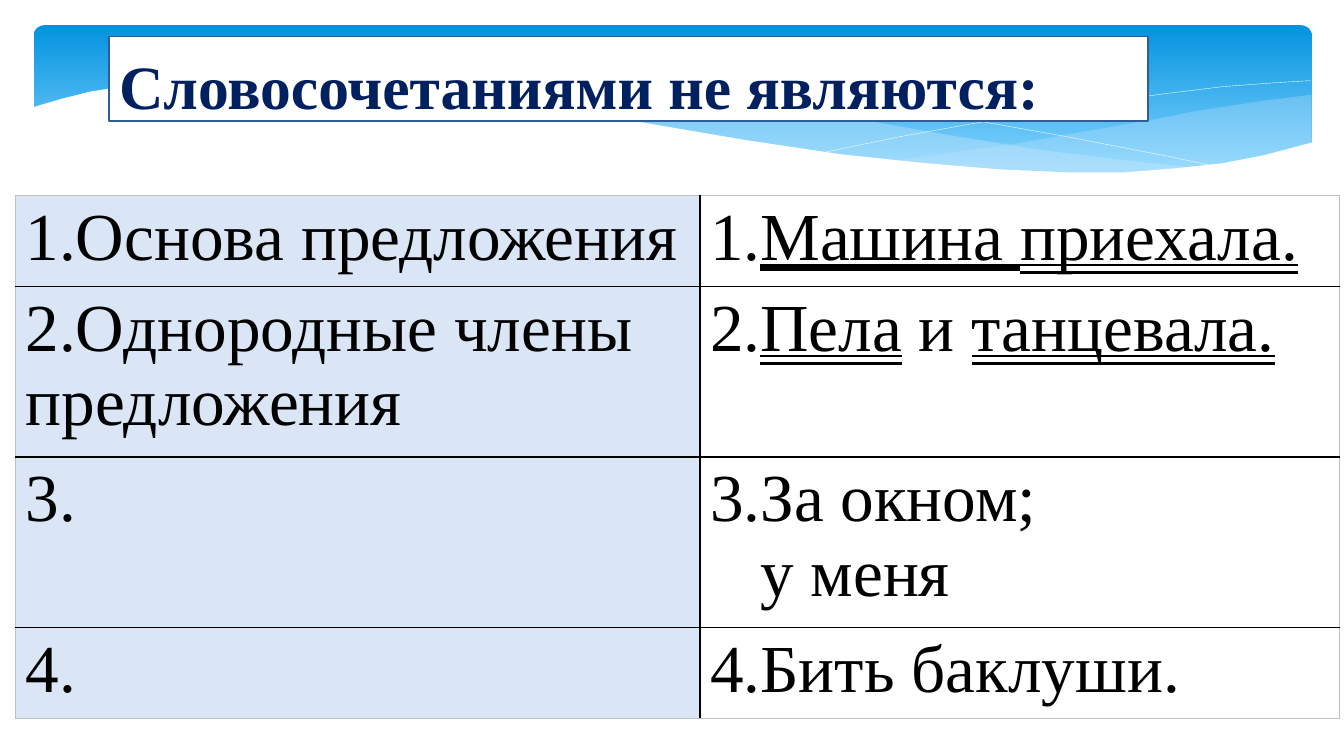
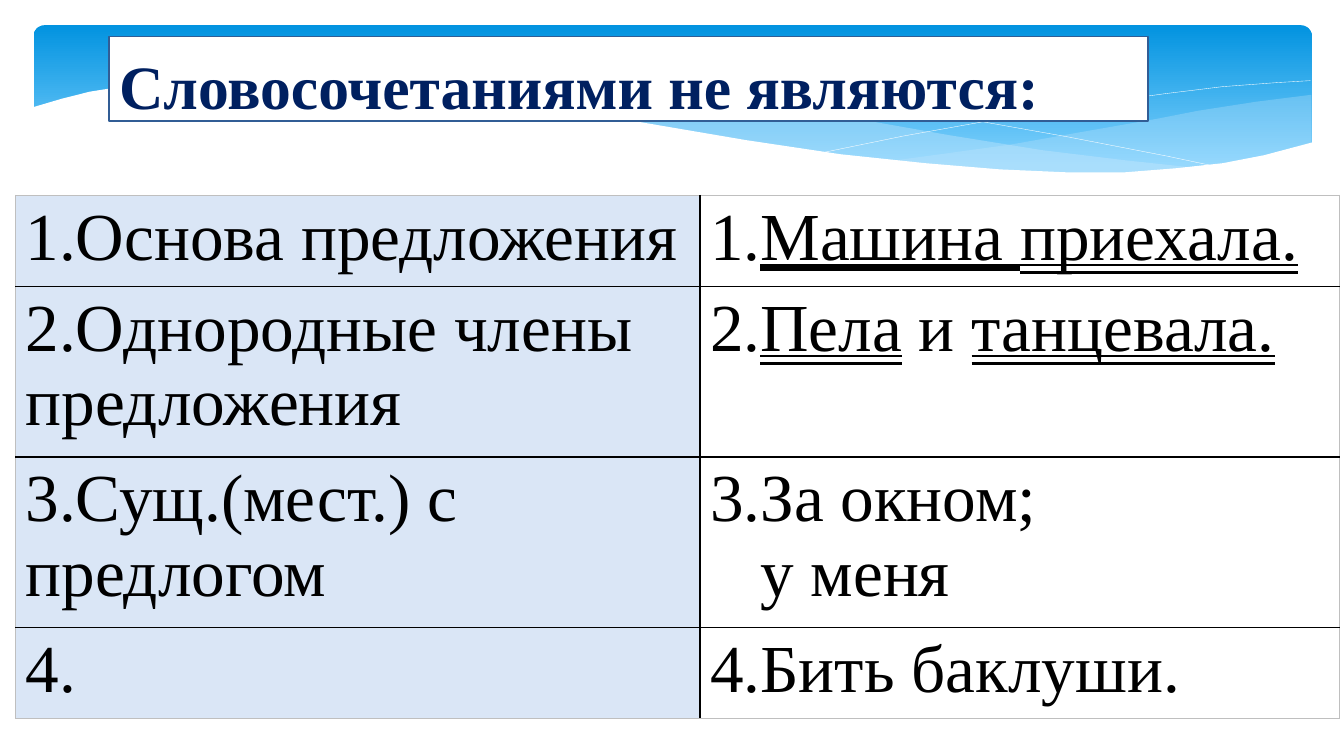
"""Build two slides that list what does not count as a word combination."""
from dataclasses import dataclass
from typing import Optional

from lxml import etree
from pptx import Presentation
from pptx.dml.color import RGBColor
from pptx.enum.shapes import MSO_SHAPE
from pptx.enum.text import MSO_ANCHOR, MSO_AUTO_SIZE, MSO_UNDERLINE, PP_ALIGN
from pptx.oxml.ns import qn
from pptx.util import Pt

ROUNDED = MSO_SHAPE.ROUNDED_RECTANGLE
TOP = MSO_ANCHOR.TOP
LEFT = PP_ALIGN.LEFT
FIXED_SIZE = MSO_AUTO_SIZE.NONE
SUBJECT = MSO_UNDERLINE.HEAVY_LINE
PREDICATE = MSO_UNDERLINE.DOUBLE_LINE
TITLE_ONLY_LAYOUT = 5


@dataclass(frozen=True)
class Theme:
    """Colours, font and type sizes of the deck."""

    font: str = "Times New Roman"
    title_size: float = 44
    table_size: float = 48
    white: str = "FFFFFF"
    black: str = "000000"
    navy: str = "002060"
    title_border: str = "315D95"
    band_top: str = "0293E0"
    band_bottom: str = "83D3FE"
    pale_wave: str = "C6E7FC"
    rule_column: str = "DAE6F6"
    table_edge: str = "BFBFBF"


@dataclass(frozen=True)
class Wave:
    """One outline of the header band, with its points."""

    points: tuple[tuple[float, float], ...]
    fill: Optional[str] = None
    line: Optional[str] = None
    opacity: int = 100


@dataclass(frozen=True)
class Phrase:
    """A stretch of text with one kind of underline."""

    text: str
    underline: Optional[MSO_UNDERLINE] = None


@dataclass(frozen=True)
class Line:
    """A paragraph of phrases with a left indent."""

    phrases: tuple[Phrase, ...]
    indent: float = 0


@dataclass(frozen=True)
class Row:
    """A rule, the lines of its example and the row height."""

    rule: str
    example: tuple[Line, ...]
    height: float


THEME = Theme()
TITLE = "Словосочетаниями не являются:"
COLUMN_WIDTHS = (489, 457)
SHORT_ROW, TALL_ROW = 65, 122

WAVES = (
    Wave((
        (936.7, 67.7), (897.1, 72.7), (855.4, 79.2), (825.8, 85), (772.6, 94.3),
        (723.6, 103), (677.5, 109.4), (635, 115.2), (676.8, 118.8), (715, 121.7),
        (749.5, 123.8), (801.4, 123.8), (837.4, 121.7), (869, 117.4),
        (897.8, 112.3), (936.7, 102.2),
    ), fill=THEME.pale_wave, opacity=29),
    Wave((
        (856.8, 120.2), (803.5, 114.5), (744.5, 107.3), (677.5, 96.5),
        (604.1, 83.5), (546.5, 73.4), (493.9, 66.2), (445.7, 61.9), (403.2, 59),
        (364.3, 57.6), (330.5, 57.6), (301, 59), (275, 61.9), (328.3, 67.7),
        (388.1, 76.3), (431.3, 83.5), (508.3, 97.2), (577.4, 108),
        (638.6, 115.9), (693.4, 121), (741.6, 123.8), (784.8, 124.6),
        (823, 123.1),
    ), fill=THEME.pale_wave, opacity=40),
    Wave((
        (296.6, 64.8), (315.4, 61.9), (348.5, 59.8), (385.2, 59), (432, 59),
        (489.6, 61.9), (534.2, 65.5), (583.9, 70.6), (637.9, 77.8),
        (698.4, 86.4), (763.2, 97.9), (833.8, 111.6), (871.2, 119.5),
    ), line=THEME.white),
    Wave((
        (589, 108.7), (645.1, 97.2), (717.8, 84.2), (774, 74.9), (831.6, 67),
        (873.4, 61.9), (912.2, 59), (936, 57.6),
    ), line=THEME.white),
    Wave((
        (938.2, 101.5), (902.9, 110.9), (873.4, 116.6), (840.2, 120.2),
        (803.5, 123.1), (761.8, 123.1), (714.2, 121), (661, 116.6),
        (600.5, 110.2), (532.8, 100.1), (456.5, 87.1), (429.1, 82.1),
        (375.1, 73.4), (326.2, 66.2), (280.8, 61.2), (239.8, 58.3),
        (203, 56.2), (169.2, 56.2), (126.7, 58.3), (91.4, 61.2), (64.1, 65.5),
        (43.9, 70.6), (22.3, 77), (22.3, 161.3), (938.2, 161.3),
    ), fill=THEME.white),
)


def plain(text: str, indent: float = 0) -> Line:
    """Return a line without underlines."""
    return Line((Phrase(text),), indent)


def rows_with(third_rule: str) -> tuple[Row, ...]:
    """Return the table rows, with the given wording of the third rule."""
    return (
        Row("1.Основа предложения", (Line((
            Phrase("1."), Phrase("Машина ", SUBJECT), Phrase("приехала.", PREDICATE),
        )),), SHORT_ROW),
        Row("2.Однородные члены предложения", (Line((
            Phrase("2."), Phrase("Пела", PREDICATE), Phrase(" и "),
            Phrase("танцевала.", PREDICATE),
        )),), TALL_ROW),
        Row(third_rule, (plain("3.За окном;"), plain("у меня", 36)), TALL_ROW),
        Row("4.", (plain("4.Бить баклуши."),), SHORT_ROW),
    )


def rgb(code: str) -> RGBColor:
    """Turn a hex code into a colour."""
    return RGBColor.from_string(code)


def style_run(run, size: float, color: str, bold: bool = False) -> None:
    """Give a run the deck font with a size and colour."""
    run.font.name = THEME.font
    run.font.size = Pt(size)
    run.font.bold = bold
    run.font.color.rgb = rgb(color)


def draw_wave(slide, wave: Wave):
    """Draw one wave and return its shape."""
    corners = [(Pt(x), Pt(y)) for x, y in wave.points]
    builder = slide.shapes.build_freeform(*corners[0], scale=1.0)
    builder.add_line_segments(corners[1:], close=wave.fill is not None)
    shape = builder.convert_to_shape()
    shape.shadow.inherit = False
    if wave.fill:
        shape.fill.solid()
        shape.fill.fore_color.rgb = rgb(wave.fill)
        if wave.opacity < 100:
            color = next(shape.element.spPr.iter(qn("a:srgbClr")))
            etree.SubElement(color, qn("a:alpha"), val=str(wave.opacity * 1000))
    else:
        shape.fill.background()
    if wave.line:
        shape.line.color.rgb = rgb(wave.line)
        shape.line.width = Pt(0.25)
    else:
        shape.line.fill.background()
    return shape


def draw_band(slide) -> list:
    """Draw the gradient header band and its waves."""
    band = slide.shapes.add_shape(ROUNDED, Pt(24), Pt(18), Pt(913), Pt(112.3))
    band.adjustments[0] = 0.07
    band.shadow.inherit = False
    band.line.fill.background()
    band.fill.gradient()
    band.fill.gradient_angle = 270
    stops = ((0, THEME.band_top), (0.9, THEME.band_bottom))
    for stop, (position, color) in zip(band.fill.gradient_stops, stops):
        stop.position = position
        stop.color.rgb = rgb(color)
    return [band, *(draw_wave(slide, wave) for wave in WAVES)]


def prepare_layout(layout, band: list) -> None:
    """Place the title and move the header band into the shared layout."""
    for placeholder in list(layout.placeholders):
        if placeholder.placeholder_format.idx:
            layout.shapes.element.remove(placeholder.element)
        else:
            placeholder.left, placeholder.top = Pt(77.8), Pt(26)
            placeholder.width, placeholder.height = Pt(742.3), Pt(60.5)
    for part in band:
        layout.shapes.element.append(part.element)


def fill_title(slide) -> None:
    """Write and format the slide title."""
    title = slide.shapes.title
    title.fill.solid()
    title.fill.fore_color.rgb = rgb(THEME.white)
    title.line.color.rgb = rgb(THEME.title_border)
    title.line.width = Pt(1.25)
    frame = title.text_frame
    frame.text = TITLE
    frame.auto_size = FIXED_SIZE
    frame.vertical_anchor = TOP
    frame.margin_top, frame.margin_bottom = Pt(8), Pt(0)
    heading = frame.paragraphs[0]
    heading.alignment = LEFT
    style_run(heading.runs[0], THEME.title_size, THEME.navy, bold=True)


def set_borders(cell, outer: dict[str, bool]) -> None:
    """Draw pale lines on outer sides and black ones on inner sides."""
    properties = cell._tc.get_or_add_tcPr()
    for side, is_outer in outer.items():
        width = Pt(0.5) if is_outer else Pt(1)
        border = etree.SubElement(properties, qn(f"a:{side}"), w=str(width))
        paint = etree.SubElement(border, qn("a:solidFill"))
        color = THEME.table_edge if is_outer else THEME.black
        etree.SubElement(paint, qn("a:srgbClr"), val=color)


def fill_cell(cell, lines: tuple[Line, ...], background: str) -> None:
    """Write the lines of a cell and colour its background."""
    cell.fill.solid()
    cell.fill.fore_color.rgb = rgb(background)
    frame = cell.text_frame
    for number, line in enumerate(lines):
        paragraph = frame.add_paragraph() if number else frame.paragraphs[0]
        if line.indent:
            paragraph._p.get_or_add_pPr().set("marL", str(Pt(line.indent)))
        for phrase in line.phrases:
            run = paragraph.add_run()
            run.text = phrase.text
            style_run(run, THEME.table_size, THEME.black)
            if phrase.underline is not None:
                run.font.underline = phrase.underline


def draw_table(slide, rows: tuple[Row, ...]) -> None:
    """Draw the table of rules and examples."""
    height = sum(row.height for row in rows)
    table = slide.shapes.add_table(
        len(rows), len(COLUMN_WIDTHS), Pt(11), Pt(139.5),
        Pt(sum(COLUMN_WIDTHS)), Pt(height)).table
    table.first_row = table.horz_banding = False
    for column, width in zip(table.columns, COLUMN_WIDTHS):
        column.width = Pt(width)
    for r, row in enumerate(rows):
        table.rows[r].height = Pt(row.height)
        contents = (((plain(row.rule),), THEME.rule_column),
                    (row.example, THEME.white))
        for c, (lines, background) in enumerate(contents):
            cell = table.cell(r, c)
            set_borders(cell, {
                "lnL": c == 0, "lnR": c == len(contents) - 1,
                "lnT": r == 0, "lnB": r == len(rows) - 1})
            fill_cell(cell, lines, background)


def main() -> None:
    """Build the deck and save it."""
    deck = Presentation()
    deck.slide_width, deck.slide_height = Pt(960), Pt(540)
    layout = deck.slide_layouts[TITLE_ONLY_LAYOUT]
    slides = []
    for third_rule in ("3.", "3.Сущ.(мест.) с предлогом"):
        slide = deck.slides.add_slide(layout)
        slides.append((slide, rows_with(third_rule)))
    prepare_layout(layout, draw_band(slides[0][0]))
    for slide, rows in slides:
        fill_title(slide)
        draw_table(slide, rows)
    deck.save("out.pptx")


if __name__ == "__main__":
    main()
